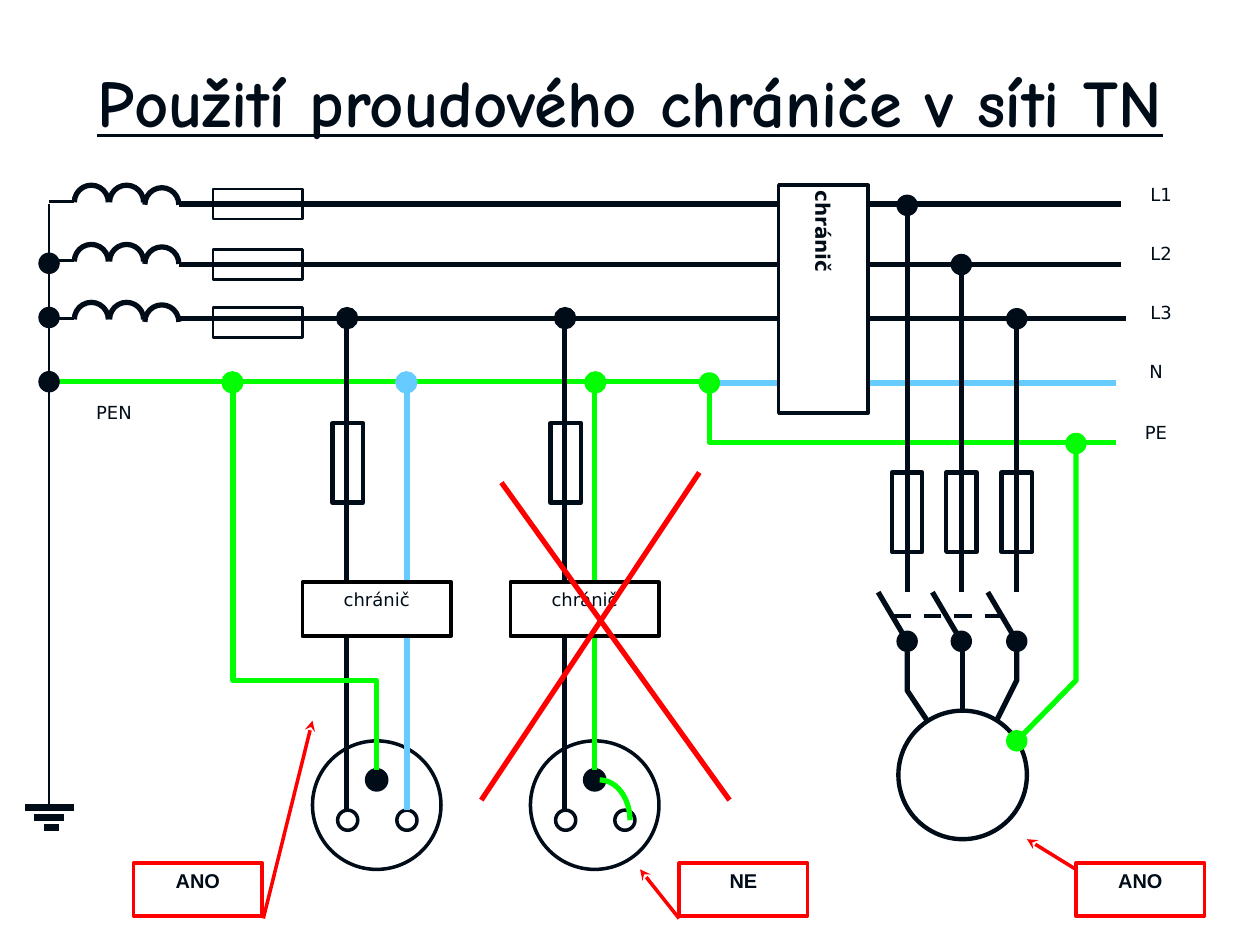
from lxml import etree
from pptx import Presentation
from pptx import util as u
from pptx.dml.color import RGBColor
from pptx.enum import dml, shapes, text
from pptx.oxml import ns

INK = RGBColor(0x00, 0x0C, 0x18)
BLACK = RGBColor(0x00, 0x00, 0x00)
WHITE = RGBColor(0xFF, 0xFF, 0xFF)
GREEN = RGBColor(0x00, 0xFF, 0x00)
HATCH = RGBColor(0x40, 0xE0, 0x40)
BLUE = RGBColor(0x66, 0xCC, 0xFF)
RED = RGBColor(0xFF, 0x00, 0x00)

RECT = shapes.MSO_SHAPE.RECTANGLE
OVAL = shapes.MSO_SHAPE.OVAL
ARC = shapes.MSO_SHAPE.ARC

prs = Presentation()
prs.slide_width, prs.slide_height = u.Inches(10), u.Inches(7.5)
col = row = prs.slide_width // 10
s = prs.slides.add_slide(prs.slide_layouts[6])


def add_part(kind, x, y, w, h, fill=None, line=INK, weight=2):
    sp = s.shapes.add_shape(kind, round(x * col), round(y * row), round(w * col), round(h * row))
    sp.shadow.inherit = False
    if fill is None:
        sp.fill.background()
    elif fill == GREEN:
        sp.fill.patterned()
        sp.fill.pattern = dml.MSO_PATTERN.WIDE_UPWARD_DIAGONAL
        sp.fill.fore_color.rgb = HATCH
        sp.fill.back_color.rgb = GREEN
    else:
        sp.fill.solid()
        sp.fill.fore_color.rgb = fill
    sp.line.color.rgb = line
    sp.line.width = u.Pt(weight)
    return sp


def add_wire(*points, line=INK, weight=3):
    pts = [(round(x * col), round(y * row)) for x, y in points]
    if len(pts) == 2:
        sp = s.shapes.add_connector(shapes.MSO_CONNECTOR.STRAIGHT, *pts[0], *pts[1])
        etree.SubElement(sp._element.spPr, ns.qn("a:effectLst"))
    else:
        fb = s.shapes.build_freeform(*pts[0])
        fb.add_line_segments(pts[1:], close=False)
        sp = fb.convert_to_shape()
        sp.shadow.inherit = False
        sp.fill.background()
    sp.line.color.rgb = line
    sp.line.width = u.Pt(weight)
    return sp


tf = s.shapes.add_textbox(round(0.12 * col), round(0.3 * row), round(9.76 * col), row).text_frame
tf.word_wrap = True
tf.vertical_anchor = text.MSO_ANCHOR.MIDDLE
tf.margin_left = tf.margin_right = tf.margin_top = tf.margin_bottom = round(0.04 * col)
p = tf.paragraphs[0]
p.text = "Použití proudového chrániče v síti TN"
p.alignment = text.PP_ALIGN.CENTER
p.font.name, p.font.size, p.font.bold, p.font.underline = "Comic Neue", u.Pt(38), True, True
p.font.color.rgb = INK

for coil_y, phase_y, fuse_y, end_x in ((1.6, 1.62, 1.5, 8.9), (2.07, 2.1, 1.98, 8.9), (2.53, 2.53, 2.44, 8.94)):
    add_wire((1.42, phase_y), (end_x, phase_y))
    add_wire((0.39, coil_y), (0.59, coil_y), weight=1.5)
    for turn, drop in enumerate((0, 0, 0.02)):
        sp = add_part(ARC, 0.59 + 0.28 * turn, coil_y - 0.13 + drop, 0.27, 0.27, weight=3)
        sp.adjustments[0], sp.adjustments[1] = 108, 0
    add_part(RECT, 1.69, fuse_y, 0.71, 0.24, weight=1.5)

add_wire((0.39, 1.62), (0.39, 6.41), weight=1.5)
for y, left, right in ((6.41, 0.2, 0.59), (6.49, 0.27, 0.51), (6.57, 0.35, 0.47)):
    add_wire((left, y), (right, y), weight=4)

add_wire((0.47, 3.03), (5.63, 3.03), line=GREEN)
add_wire((5.63, 3.04), (8.86, 3.04), line=BLUE)
add_wire((5.63, 3.04), (5.63, 3.51), (8.86, 3.51), line=GREEN)
for y in (2.01, 2.44, 2.95):
    add_part(OVAL, 0.31, y, 0.16, 0.16, INK, INK, 0.75)
add_part(OVAL, 5.55, 2.96, 0.16, 0.16, GREEN, GREEN, 0.75)

for x in (2.48, 4.21):
    add_part(OVAL, x, 5.88, 1.02, 1.02)
    for dx, y, fill in ((0.2, 6.43, None), (0.67, 6.43, None), (0.43, 6.11, INK)):
        add_part(OVAL, x + dx, y, 0.16, 0.16, fill)
    add_wire((x + 0.27, 6.43), (x + 0.27, 2.52))
    add_part(RECT, x + 0.16, 3.36, 0.24, 0.63, weight=2.5)
    add_part(OVAL, x + 0.2, 2.45, 0.15, 0.15, INK)

add_wire((2.99, 6.11), (2.99, 5.4), (1.85, 5.4), (1.85, 3.04), line=GREEN)
add_wire((3.23, 6.43), (3.23, 3.04), line=BLUE)
add_wire((4.72, 6.11), (4.72, 3.04), line=GREEN)
add_part(ARC, 4.52, 6.19, 0.48, 0.64, line=GREEN, weight=3)
for x, color in ((1.77, GREEN), (3.15, BLUE), (4.65, GREEN)):
    add_part(OVAL, x, 2.96, 0.15, 0.15, color, color)

texts = []
for x in (2.4, 4.05):
    texts.append((add_part(RECT, x, 4.62, 1.18, 0.43, WHITE, BLACK), "chránič", "DejaVu Sans", 10.3, False, 0.05))
main_breaker = add_part(RECT, 6.18, 1.47, 0.71, 1.81, WHITE)
texts.append((main_breaker, "chránič", "DejaVu Sans", 11.4, True, 0.04))

for x, verdict, start, tip in (
    (1.06, "ANO", (2.09, 7.29), (2.48, 5.72)),
    (5.39, "NE", (5.39, 7.29), (5.08, 6.9)),
    (8.54, "ANO", (8.54, 6.9), (8.15, 6.66)),
):
    texts.append((add_part(RECT, x, 6.85, 1.02, 0.42, None, RED), verdict, "Arial", 11.4, True, 0.04))
    arrow = add_wire(start, tip, line=RED, weight=2)
    etree.SubElement(arrow.line._get_or_add_ln(), ns.qn("a:tailEnd"), type="stealth")

add_wire((3.98, 3.83), (5.79, 6.35), line=RED)
add_wire((5.55, 3.75), (3.82, 6.35), line=RED)

add_part(OVAL, 7.13, 5.64, 1.02, 1.02, weight=2.5)
for x, phase_y in ((7.2, 1.63), (7.63, 2.1), (8.07, 2.53)):
    add_wire((x, 4.7), (x, phase_y))
    add_wire((x, 5.09), (x - 0.23, 4.7))
    add_part(RECT, x - 0.12, 3.75, 0.24, 0.63, weight=2.5)
    for y in (phase_y, 5.09):
        add_part(OVAL, x - 0.08, y - 0.08, 0.16, 0.16, INK, INK, 0.75)
add_wire((7.2, 5.17), (7.2, 5.48), (7.36, 5.72))
add_wire((7.64, 5.17), (7.64, 5.64))
add_wire((8.07, 5.09), (8.07, 5.4), (7.91, 5.72))
add_wire((8.54, 3.51), (8.54, 5.4), (8.07, 5.88), line=GREEN)
for x, y in ((8.46, 3.44), (7.99, 5.8)):
    add_part(OVAL, x, y, 0.16, 0.16, GREEN, GREEN, 0.75)
add_wire((7.09, 4.89), (7.95, 4.89), weight=2.5).line.dash_style = dml.MSO_LINE.DASH

for label, x, y, w in (
    ("L1", 9.02, 1.39, 0.39),
    ("L2", 9.02, 1.86, 0.39),
    ("L3", 9.02, 2.33, 0.39),
    ("N", 8.94, 2.8, 0.47),
    ("PE", 8.86, 3.28, 0.63),
    ("PEN", 0.59, 3.12, 0.63),
):
    sp = s.shapes.add_textbox(round(x * col), round(y * row), round(w * col), round(0.3 * row))
    texts.append((sp, label, "DejaVu Sans", 10.3, False, 0))

for sp, words, font, size, bold, inset in texts:
    tf = sp.text_frame
    tf.word_wrap = True
    tf.margin_left = tf.margin_right = tf.margin_top = tf.margin_bottom = round(inset * col)
    tf.vertical_anchor = text.MSO_ANCHOR.TOP if inset else text.MSO_ANCHOR.MIDDLE
    p = tf.paragraphs[0]
    p.text = words
    p.alignment = text.PP_ALIGN.CENTER
    p.space_before = u.Pt(size * 1.2)
    p.font.name, p.font.size, p.font.bold = font, u.Pt(size), bold
    p.font.color.rgb = INK

tf = main_breaker.text_frame
tf.word_wrap = False
tf.vertical_anchor = text.MSO_ANCHOR.MIDDLE
tf.paragraphs[0].space_before = u.Pt(0)
tf._txBody.bodyPr.set("vert", "eaVert")

prs.save("out.pptx")
